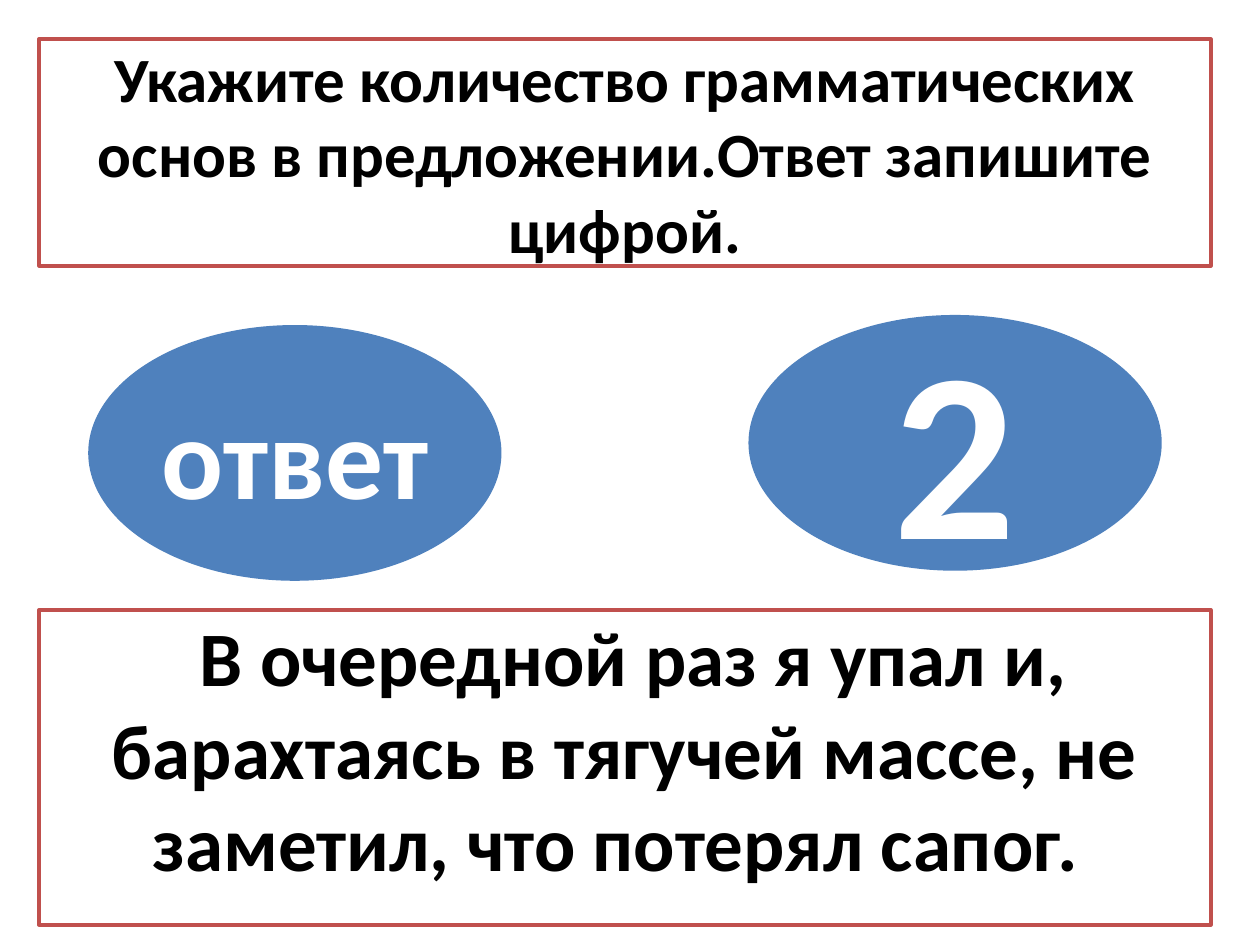
import pptx
import pptx.dml.color
import pptx.enum.shapes
import pptx.enum.text
import pptx.util
from pptx.util import Inches

WHITE = pptx.dml.color.RGBColor(0xFF, 0xFF, 0xFF)
BLACK = pptx.dml.color.RGBColor(0x00, 0x00, 0x00)
RED = pptx.dml.color.RGBColor(0xC0, 0x50, 0x4D)
BLUE = pptx.dml.color.RGBColor(0x4F, 0x81, 0xBD)

MARGIN = Inches(0.31)
PANEL_WIDTH = Inches(9.3)
OVAL_WIDTH = Inches(3.28)
OVAL_HEIGHT = Inches(2.03)


class QuizSlide:
    font_name = "Calibri"
    border = pptx.util.Pt(2)

    def __init__(self, slide):
        self.slide = slide

    def set_text(self, shape, text, size, color):
        frame = shape.text_frame
        frame.text = text
        frame.word_wrap = True
        frame.auto_size = pptx.enum.text.MSO_AUTO_SIZE.NONE
        frame.vertical_anchor = pptx.enum.text.MSO_ANCHOR.MIDDLE
        paragraph = frame.paragraphs[0]
        paragraph.alignment = pptx.enum.text.PP_ALIGN.CENTER
        paragraph.font.name = self.font_name
        paragraph.font.size = pptx.util.Pt(size)
        paragraph.font.bold = True
        paragraph.font.color.rgb = color

    def outline(self, shape):
        shape.fill.solid()
        shape.fill.fore_color.rgb = WHITE
        shape.line.color.rgb = RED
        shape.line.width = self.border

    def question(self, text, top, height, size):
        title = self.slide.shapes.title
        title.left, title.top = MARGIN, top
        title.width, title.height = PANEL_WIDTH, height
        self.outline(title)
        self.set_text(title, text, size, BLACK)

    def sentence(self, text, top, height, size, bottom_inset):
        panel = self.slide.shapes.add_shape(
            pptx.enum.shapes.MSO_SHAPE.RECTANGLE, MARGIN, top, PANEL_WIDTH, height)
        panel.shadow.inherit = False
        self.outline(panel)
        self.set_text(panel, text, size, BLACK)
        panel.text_frame.margin_bottom = bottom_inset

    def oval(self, text, left, top, size):
        oval = self.slide.shapes.add_shape(
            pptx.enum.shapes.MSO_SHAPE.OVAL, left, top, OVAL_WIDTH, OVAL_HEIGHT)
        oval.shadow.inherit = False
        oval.fill.solid()
        oval.fill.fore_color.rgb = BLUE
        oval.line.fill.background()
        self.set_text(oval, text, size, WHITE)


def main():
    deck = pptx.Presentation()
    deck.slide_width = Inches(10)
    deck.slide_height = Inches(7.5)
    quiz = QuizSlide(deck.slides.add_slide(deck.slide_layouts[5]))
    quiz.question(
        "Укажите количество грамматических основ в предложении.Ответ запишите цифрой.",
        Inches(0.31), Inches(1.8), 36)
    quiz.oval("ответ", Inches(0.7), Inches(2.58), 66)
    quiz.oval("2", Inches(5.94), Inches(2.5), 138)
    quiz.sentence(
        " В очередной раз я упал и, барахтаясь в тягучей массе, не заметил, что потерял сапог. ",
        Inches(4.84), Inches(2.5), 44, Inches(0.35))
    deck.save("out.pptx")


if __name__ == "__main__":
    main()
